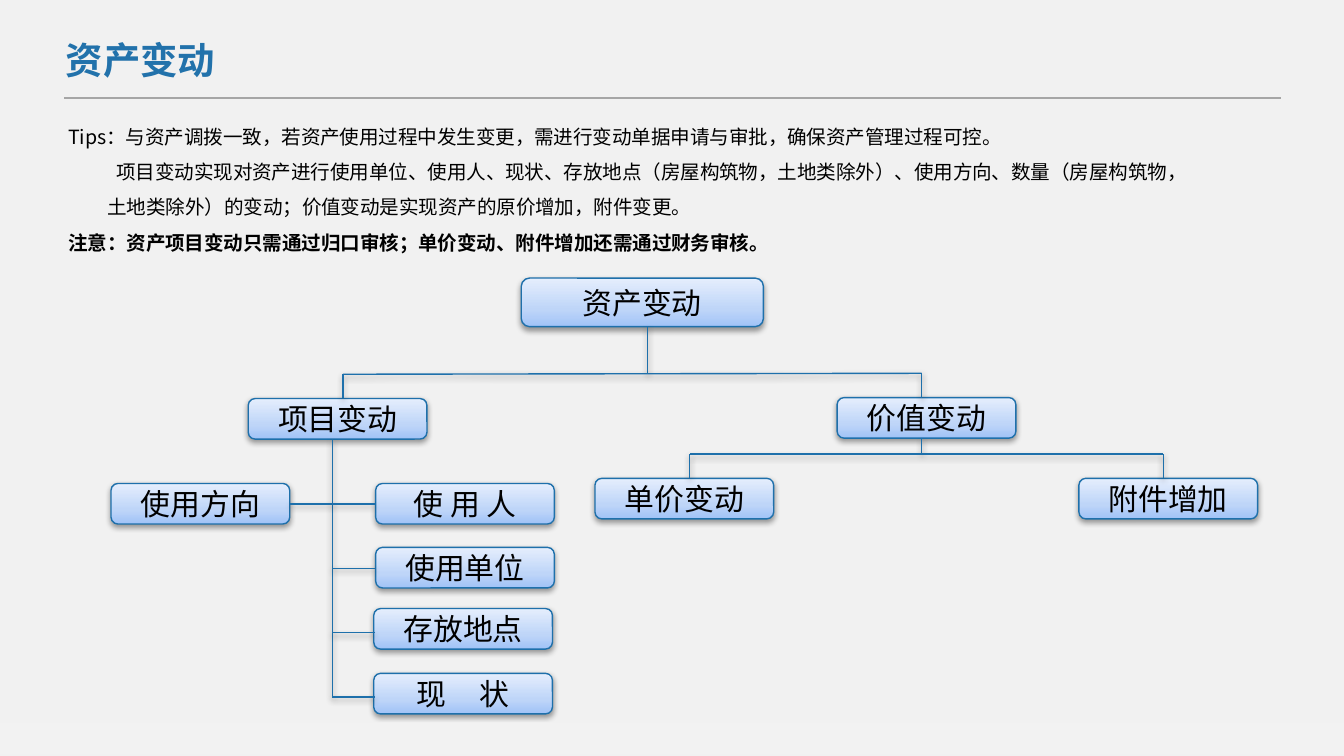
from pptx import Presentation
from pptx.dml.color import RGBColor
from pptx.enum.shapes import MSO_CONNECTOR, MSO_SHAPE
from pptx.enum.text import MSO_ANCHOR, MSO_AUTO_SIZE, PP_ALIGN
from pptx.oxml import parse_xml
from pptx.oxml.ns import nsdecls
from pptx.util import Pt
from lxml import etree

STRAIGHT = MSO_CONNECTOR.STRAIGHT
ROUNDED, RECTANGLE = MSO_SHAPE.ROUNDED_RECTANGLE, MSO_SHAPE.RECTANGLE
TOP, MIDDLE = MSO_ANCHOR.TOP, MSO_ANCHOR.MIDDLE
LEFT, CENTER = PP_ALIGN.LEFT, PP_ALIGN.CENTER
NO_AUTOSIZE = MSO_AUTO_SIZE.NONE
CJK_FONT = "Noto Sans CJK SC"
BLUE = "1E70AB"
NS = nsdecls("a")
GRADIENT = (
    f'<a:gradFill {NS} rotWithShape="1"><a:gsLst>'
    '<a:gs pos="0"><a:srgbClr val="A1C3F7"/></a:gs>'
    '<a:gs pos="35000"><a:srgbClr val="BED5F8"/></a:gs>'
    '<a:gs pos="100000"><a:srgbClr val="E5EEFD"/></a:gs>'
    '</a:gsLst><a:lin ang="16200000" scaled="1"/></a:gradFill>'
)
SHADOW = (
    f'<a:effectLst {NS}><a:outerShdw blurRad="40000" dist="20000" dir="5400000" rotWithShape="0">'
    '<a:srgbClr val="000000"><a:alpha val="38000"/></a:srgbClr></a:outerShdw></a:effectLst>'
)


def color(hex_string):
    return RGBColor.from_string(hex_string)


def add_run(paragraph, text, size, font_name, hex_string, bold=False):
    run = paragraph.add_run()
    run.text = text
    run.font.size = Pt(size)
    run.font.name = font_name
    run.font.bold = bold
    run.font.color.rgb = color(hex_string)
    east_asian = etree.SubElement(run.font._element, f"{{{run.font._element.nsmap['a']}}}ea")
    east_asian.set("typeface", CJK_FONT)
    return run


prs = Presentation()
prs.slide_width, prs.slide_height = Pt(720), Pt(405)
slide = prs.slides.add_slide(prs.slide_layouts[5])
slide.background.fill.solid()
slide.background.fill.fore_color.rgb = color("F1F1F1")

heading_rule = slide.shapes.add_connector(STRAIGHT, Pt(34.5), Pt(52.5), Pt(686), Pt(52.5))
heading_rule.line.color.rgb = color("A6A6A6")
heading_rule.line.width = Pt(1)
heading_rule._element.spPr.append(parse_xml(f"<a:effectLst {NS}/>"))

heading = slide.shapes.title
heading.left, heading.top, heading.width, heading.height = Pt(28), Pt(16.5), Pt(110), Pt(31.5)
heading.text_frame.word_wrap = True
heading.text_frame.auto_size = NO_AUTOSIZE
heading.text_frame.vertical_anchor = TOP
heading.text_frame.paragraphs[0].alignment = LEFT
add_run(heading.text_frame.paragraphs[0], "资产变动", 20, CJK_FONT, "2272AB", True)

tips = slide.shapes.add_textbox(Pt(29.5), Pt(57), Pt(633.5), Pt(83.5)).text_frame
tips.word_wrap = True
tip_paragraphs = [
    (["Tips：与资产调拨一致，若资产使用过程中发生变更，需进行变动单据申请与审批，确保资产管理过程可控。"], False),
    (["项目变动实现对资产进行使用单位、使用人、现状、存放地点（房屋构筑物，土地类除外）、使用方向、数量（房屋构筑物，",
      "土地类除外）的变动；价值变动是实现资产的原价增加，附件变更。"], False),
    (["注意：资产项目变动只需通过归口审核；单价变动、附件增加还需通过财务审核。"], True),
]
for index, (tip_lines, bold) in enumerate(tip_paragraphs):
    paragraph = tips.add_paragraph() if index else tips.paragraphs[0]
    paragraph.line_spacing = 1.5
    for line_index, tip_line in enumerate(tip_lines):
        if line_index:
            paragraph.add_line_break()
        add_run(paragraph, tip_line, 10.5, CJK_FONT, "000000", bold)
    if len(tip_lines) > 1:
        paragraph_properties = paragraph._p.get_or_add_pPr()
        paragraph_properties.set("marL", str(Pt(21)))
        paragraph_properties.set("indent", str(Pt(4.75)))

NODE_W, NODE_H = 95.75, 21.75
nodes = [
    ("资产变动", 279.25, 149, 129.75, 26),
    ("项目变动", 133, 213.5, NODE_W, NODE_H),
    ("价值变动", 448.5, 213, NODE_W, NODE_H),
    ("单价变动", 318.75, 256.25, NODE_W, NODE_H),
    ("附件增加", 578, 256.25, NODE_W, NODE_H),
    ("使用方向", 59.5, 259, NODE_W, NODE_H),
    ("使 用 人", 201.25, 259, NODE_W, NODE_H),
    ("使用单位", 201.25, 293.25, NODE_W, NODE_H),
    ("存放地点", 200.25, 326, NODE_W, NODE_H),
    ("现状", 200.25, 360.75, NODE_W, NODE_H),
]
for label, x, y, width, height in nodes:
    node = slide.shapes.add_shape(ROUNDED, Pt(x), Pt(y), Pt(width), Pt(height))
    node.adjustments[0] = 0.17
    node._element.spPr.insert(2, parse_xml(GRADIENT))
    node.line.color.rgb = color(BLUE)
    node.line.width = Pt(0.75)
    node._element.spPr.append(parse_xml(SHADOW))
    node.text_frame.word_wrap = False
    node.text_frame.vertical_anchor = MIDDLE
    node.text_frame.paragraphs[0].alignment = CENTER
    if label == "现状":
        first_character = add_run(node.text_frame.paragraphs[0], label[0], 16, "Times New Roman", "000000")
        first_character.font._element.set("spc", "1800")
        label = label[1]
    add_run(node.text_frame.paragraphs[0], label, 16, "Times New Roman", "000000")

ROOT_X, ITEM_X, VALUE_X = 347, 183.75, 493.75
UNIT_PRICE_X, ATTACHMENT_X = 369.5, 623.25
TRUNK_X, ITEM_LEFT = 178, 200.75
ROOT_BUS_Y, VALUE_BUS_Y = 200.5, 243.25
branch_ys = [270 + 34.5 * row for row in range(4)]
links = [
    (ROOT_X, 175, ROOT_X, ROOT_BUS_Y),
    (VALUE_X, 200, ITEM_X, ROOT_BUS_Y),
    (ITEM_X, ROOT_BUS_Y, ITEM_X, 213.5),
    (VALUE_X, 200, VALUE_X, 213),
    (VALUE_X, 234.75, VALUE_X, VALUE_BUS_Y),
    (ATTACHMENT_X, VALUE_BUS_Y, UNIT_PRICE_X, VALUE_BUS_Y),
    (UNIT_PRICE_X, VALUE_BUS_Y, UNIT_PRICE_X, 256.25),
    (ATTACHMENT_X, VALUE_BUS_Y, ATTACHMENT_X, 256.25),
    (TRUNK_X, 235.25, TRUNK_X, branch_ys[-1]),
    (TRUNK_X, branch_ys[0], 155.25, branch_ys[0]),
]
links += [(ITEM_LEFT, y, TRUNK_X, y) for y in branch_ys]
for ends in links:
    link = slide.shapes.add_connector(STRAIGHT, *[Pt(value) for value in ends])
    link.line.color.rgb = color(BLUE)
    link.line.width = Pt(0.75)
    link._element.spPr.append(parse_xml(SHADOW))

footer_band = slide.shapes.add_shape(RECTANGLE, Pt(0), Pt(387), Pt(720), Pt(17))
footer_band.shadow.inherit = False
footer_band.fill.solid()
footer_band.fill.fore_color.rgb = color("F2F2F2")
footer_band.line.fill.background()

prs.save("out.pptx")
